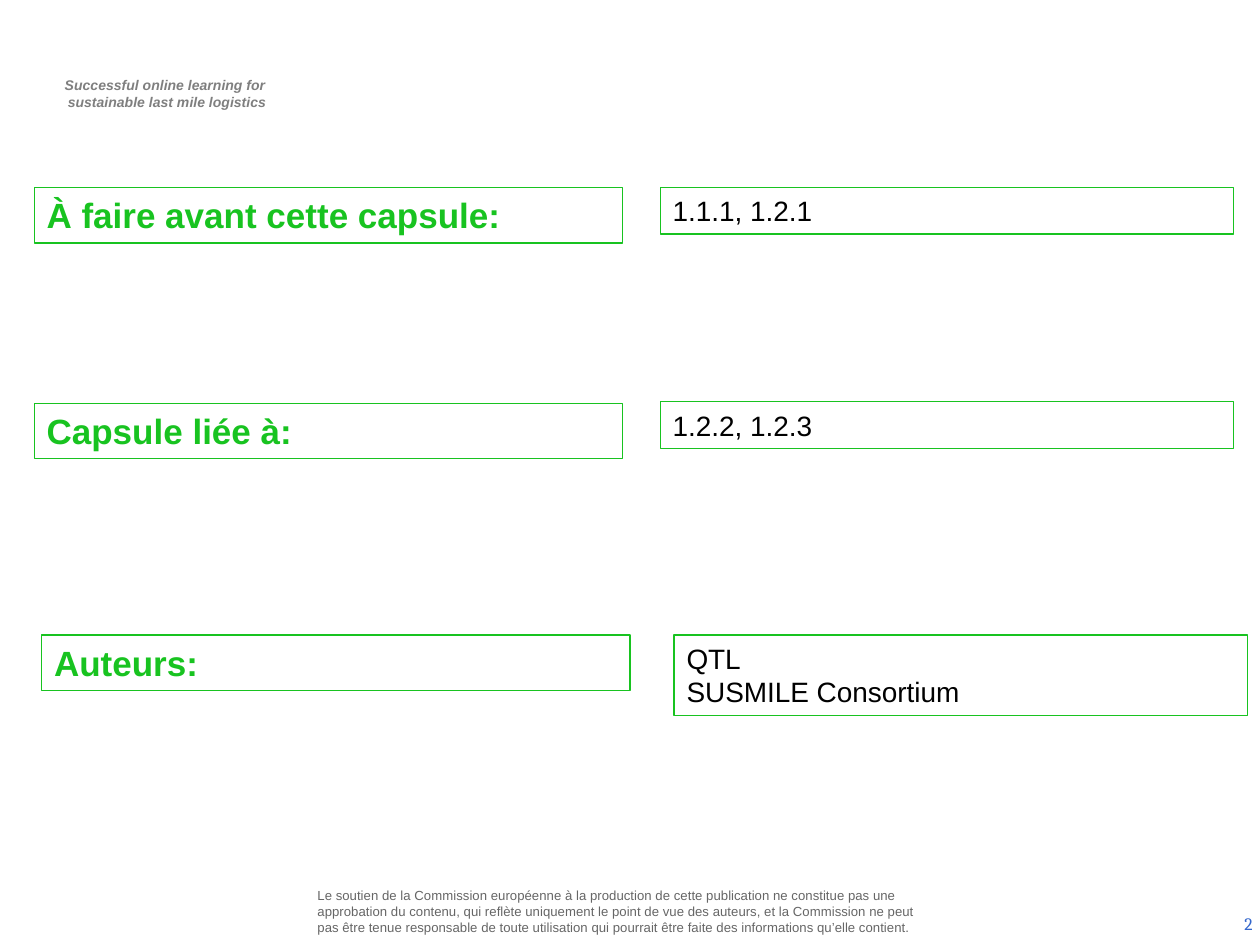
from pptx import Presentation
from pptx import util as u
from pptx.dml.color import RGBColor
from pptx.enum import shapes, text

GREEN = "18C320"
INSET = 0.25


def color(value):
    """Turn a hex string into a colour."""
    return RGBColor.from_string(value)


def place(box):
    """Turn left, top, width and height in centimetres into lengths."""
    return [u.Cm(length) for length in box]


def write(frame, lines, size, hue, font="Arial", bold=False, italic=False,
          align=text.PP_ALIGN.LEFT, anchor=text.MSO_ANCHOR.TOP,
          insets=(INSET, 0.13, INSET, 0.13), indent=0):
    """Fill a text frame with one paragraph per line."""
    frame.word_wrap = True
    frame.vertical_anchor = anchor
    (frame.margin_left, frame.margin_top,
     frame.margin_right, frame.margin_bottom) = place(insets)
    for index, line in enumerate(lines):
        paragraph = frame.add_paragraph() if index else frame.paragraphs[0]
        paragraph.alignment = align
        if indent:
            paragraph._p.get_or_add_pPr().set("marL", str(u.Cm(indent)))
        run = paragraph.add_run()
        run.text = line
        run.font.size = u.Pt(size)
        run.font.name = font
        run.font.bold = bold
        run.font.italic = italic
        run.font.color.rgb = color(hue)


def add_text(slide, box, lines, size, hue, **style):
    """Add a plain text box."""
    label = slide.shapes.add_textbox(*place(box))
    write(label.text_frame, lines, size, hue, **style)


def add_frame(slide, box, lines, size, hue, bold=False):
    """Add a white box with a green outline."""
    frame = slide.shapes.add_shape(shapes.MSO_SHAPE.RECTANGLE, *place(box))
    frame.shadow.inherit = False
    frame.fill.solid()
    frame.fill.fore_color.rgb = color("FFFFFF")
    frame.line.color.rgb = color(GREEN)
    frame.line.width = u.Pt(0.75)
    write(frame.text_frame, lines, size, hue, bold=bold)


def add_header(slide, box):
    """Add the project motto."""
    motto = ["Successful online learning for ", "sustainable last mile logistics"]
    add_text(slide, box, motto, 8, "7F7F7F", bold=True, italic=True,
             align=text.PP_ALIGN.CENTER, indent=0.1)


def add_footer(slide, box):
    """Add the disclaimer and the page number."""
    left, top, width, height = box
    disclaimer = (
        "Le soutien de la Commission européenne à la production de cette "
        "publication ne constitue pas une approbation du contenu, qui reflète "
        "uniquement le point de vue des auteurs, et la Commission ne peut pas "
        "être tenue responsable de toute utilisation qui pourrait être faite "
        "des informations qu’elle contient.")
    add_text(slide, (left, top, 12.52, height), [disclaimer], 7.5, "666666",
             anchor=text.MSO_ANCHOR.MIDDLE, insets=(0.1,) * 4)
    number_left = left + 13.28
    add_text(slide, (number_left, top + 0.25, left + width - number_left, height),
             ["2"], 10, "3366CC", font="Cambria", align=text.PP_ALIGN.RIGHT,
             anchor=text.MSO_ANCHOR.MIDDLE, insets=(INSET, 0.13, 0.15, 0.13))


def add_entry(slide, box, heading, details, detail_offset):
    """Add a heading and its details side by side."""
    left, top, width, height = box
    shift, drop = detail_offset
    detail_width = 11.56
    detail_height = 0.25 + 0.69 * len(details)
    add_frame(slide, (left, top, width, height), [heading], 20, GREEN, bold=True)
    add_frame(slide, (left + shift, top + drop, detail_width, detail_height),
              details, 16, "000000")


def main():
    """Build the slide and save it."""
    deck = Presentation()
    deck.slide_width, deck.slide_height = u.Cm(25.4), u.Cm(19.05)
    slide = deck.slides.add_slide(deck.slide_layouts[6])
    add_header(slide, (0.74, 1.42, 5.16, 0.94))
    add_footer(slide, (6.3, 17.86, 19.1, 1.02))
    entries = [
        (0.69, 3.78, "À faire avant cette capsule:", ["1.1.1, 1.2.1"], (12.62, 0)),
        (0.69, 8.13, "Capsule liée à:", ["1.2.2, 1.2.3"], (12.62, -0.03)),
        (0.84, 12.8, "Auteurs:", ["QTL", "SUSMILE Consortium"], (12.75, 0)),
    ]
    for left, top, heading, details, offset in entries:
        add_entry(slide, (left, top, 11.86, 1.12), heading, details, offset)
    deck.save("out.pptx")


if __name__ == "__main__":
    main()
